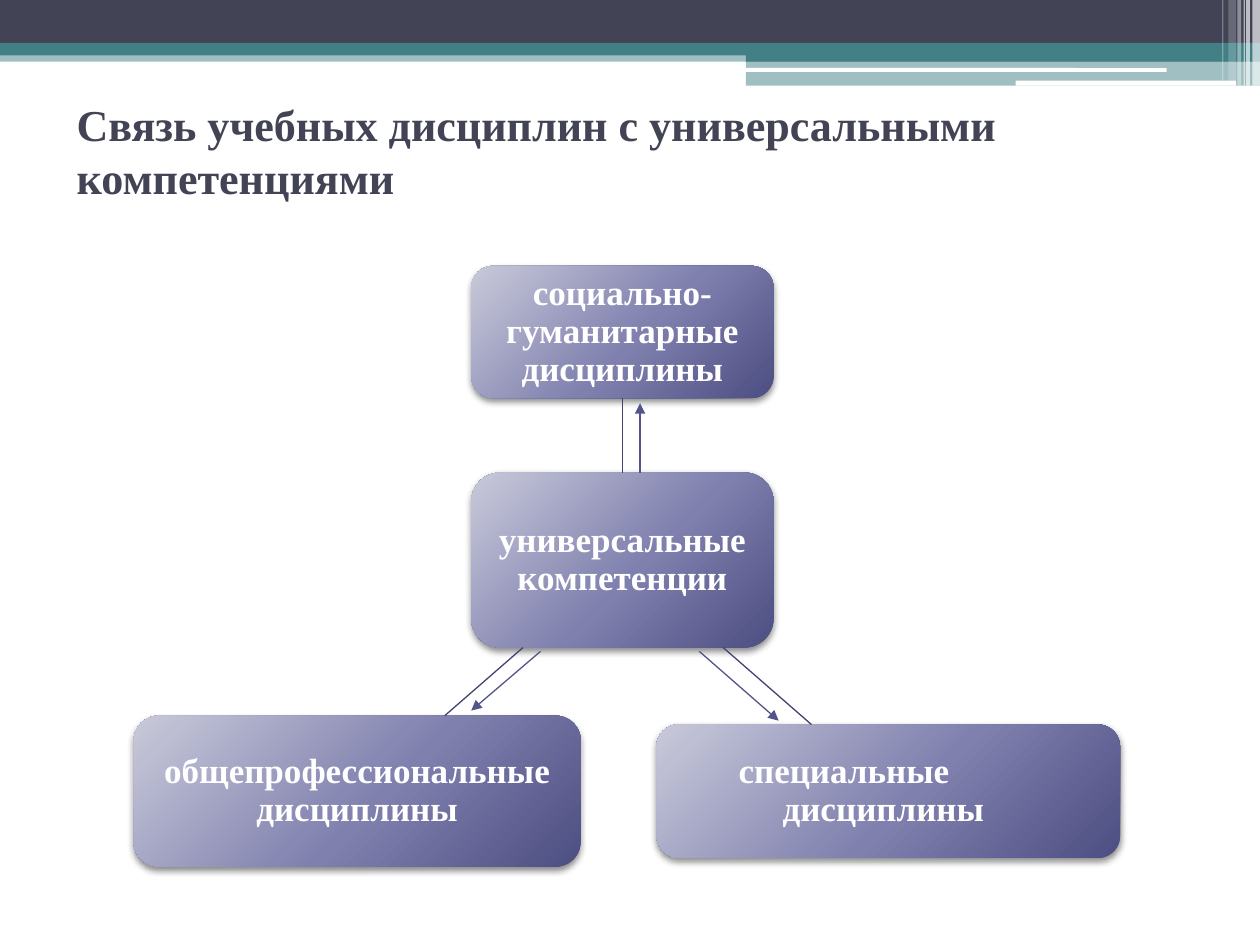
from typing import NamedTuple

from lxml import etree
from pptx import Presentation, util as u
from pptx.dml.color import RGBColor
from pptx.enum import shapes as sh, text as tx
from pptx.oxml import ns

# Grid: 100 columns by 75 rows of square cells
COLS, ROWS, CELL = 100, 75, u.Inches(0.1)
FONT = "Times New Roman"
DARK, TEAL, WHITE = "424456", "438086", "FFFFFF"
RECT = sh.MSO_SHAPE.RECTANGLE
ROUND = sh.MSO_SHAPE.ROUNDED_RECTANGLE
STOPS = ((0, "C9C9DA"), (55, "7F80AE"), (100, "4D4E81"))


class Band(NamedTuple):
    x: float
    y: float
    w: float
    h: float
    color: str
    alpha: int = 100
    form: int = RECT


class Node(NamedTuple):
    label: str
    x: float
    y: float
    w: float
    h: float
    left: float = 0  # text indent of wrapped lines, in cells
    first: float = 0  # offset of the first line, in cells


class Link(NamedTuple):
    x1: float
    y1: float
    x2: float
    y2: float
    color: str
    arrow: bool


def cells(*vals: float) -> list:
    return [u.Emu(round(v * CELL)) for v in vals]


def rgb(code: str) -> RGBColor:
    return RGBColor.from_string(code)


def sub(node, tag: str, **attrs):
    return etree.SubElement(node, ns.qn(tag), {k: str(v) for k, v in attrs.items()})


def write(shape, words: str, *, size: float, color: str, align, inset=None,
          line=1.0, left=0.0, first=0.0) -> None:
    frame = shape.text_frame
    frame.word_wrap = True
    frame.vertical_anchor = tx.MSO_ANCHOR.MIDDLE
    if inset is not None:
        for side in ("left", "right", "top", "bottom"):
            setattr(frame, f"margin_{side}", u.Inches(inset))
    para = frame.paragraphs[0]
    para.alignment, para.line_spacing = align, line
    if left:
        props = para._p.get_or_add_pPr()
        props.set("marL", str(cells(left)[0]))
        props.set("indent", str(cells(first)[0]))
    run = para.add_run()
    run.text = words
    run.font.name, run.font.size, run.font.bold = FONT, u.Pt(size), True
    run.font.color.rgb = rgb(color)


def draw_band(slide, band: Band) -> None:
    shape = slide.shapes.add_shape(band.form, *cells(*band[:4]))
    shape.shadow.inherit = False
    shape.line.fill.background()
    shape.fill.solid()
    shape.fill.fore_color.rgb = rgb(band.color)
    if band.alpha < 100:
        tone = shape._element.spPr.find(".//" + ns.qn("a:srgbClr"))
        sub(tone, "a:alpha", val=band.alpha * 1000)


def draw_node(slide, node: Node):
    shape = slide.shapes.add_shape(ROUND, *cells(node.x, node.y, node.w, node.h))
    shape.line.fill.background()
    shape.shadow.inherit = False
    props = shape._element.spPr
    # Radial gradient centred beyond the upper left corner
    grad = etree.Element(ns.qn("a:gradFill"), rotWithShape="1")
    stops = sub(grad, "a:gsLst")
    for pos, code in STOPS:
        sub(sub(stops, "a:gs", pos=pos * 1000), "a:srgbClr", val=code)
    way = sub(grad, "a:path", path="circle")
    sub(way, "a:fillToRect", l=-40000, t=-90000, r=140000, b=190000)
    props.find(ns.qn("a:prstGeom")).addnext(grad)
    # Soft shadow below
    glow = sub(props.find(ns.qn("a:effectLst")), "a:outerShdw", blurRad=u.Pt(4),
               dist=u.Pt(2), dir=5400000, rotWithShape=0)
    sub(sub(glow, "a:srgbClr", val="000000"), "a:alpha", val=45000)
    align = tx.PP_ALIGN.LEFT if node.left else tx.PP_ALIGN.CENTER
    write(shape, node.label, size=20, color=WHITE, align=align, inset=0.06,
          line=0.9, left=node.left, first=node.first)
    return shape


def draw_link(slide, link: Link):
    line = slide.shapes.add_connector(sh.MSO_CONNECTOR.STRAIGHT, *cells(*link[:4]))
    line.line.width = u.Pt(0.75)
    line.line.color.rgb = rgb(link.color)
    if link.arrow:
        sub(line.line._get_or_add_ln(), "a:tailEnd", type="triangle")
    sub(line._element.spPr, "a:effectLst")
    return line


BANDS = [
    Band(0, 4, COLS, 0.9, TEAL, 50),
    Band(0, 0, COLS, 3.4, DARK),
    Band(0, 3.4, COLS, 1, TEAL),
    Band(59.2, 3.9, 40.8, 1, TEAL),
    Band(59.2, 4.8, 40.8, 2, TEAL, 50),
    Band(59.1, 5.4, 33.5, 0.3, WHITE, form=ROUND),
    Band(80.6, 6.4, 17.5, 0.4, WHITE, form=ROUND),
] + [
    # Pale stripes at the right edge
    Band(x, 0, w, h, WHITE, alpha) for x, w, h, alpha in (
        (99.4, 0.6, 6.8, 65), (98.9, 0.3, 6.8, 65), (98.7, 0.1, 6.8, 60),
        (98.2, 0.3, 6.8, 40), (97.5, 0.6, 6.4, 20), (97, 0.1, 6.4, 30))
]
CORE = Node("универсальные компетенции", 37.4, 37.5, 24, 13.9)
SOCIAL = Node("социально-гуманитарные дисциплины", 37.4, 21.1, 24, 10.5)
OTHERS = [
    Node("специальные дисциплины", 52.1, 57.5, 36.8, 10.6, 8.9, -3.5),
    Node("общепрофессиональные дисциплины", 10.6, 56.8, 35.5, 12),
]
EDGE, ARROW = "42436F", "53548A"
LINKS = [
    Link(57.4, 51.4, 64.4, 57.5, EDGE, False),
    Link(41.5, 51.4, 35.3, 56.8, EDGE, False),
    Link(42.9, 51.7, 37.4, 56.4, ARROW, True),
    Link(55.5, 51.7, 61.8, 57.2, ARROW, True),
    Link(50.8, 37.5, 50.8, 32, ARROW, True),
]


def main() -> None:
    deck = Presentation()
    deck.slide_width, deck.slide_height = cells(COLS, ROWS)
    slide = deck.slides.add_slide(deck.slide_layouts[6])

    # Header bands and title
    for band in BANDS:
        draw_band(slide, band)
    title = slide.shapes.add_textbox(*cells(5.1, 7.6, 92.4, 8.7))
    write(title, "Связь учебных дисциплин с универсальными компетенциями",
          size=25.2, color=DARK, align=tx.PP_ALIGN.LEFT)

    # Boxes, then the lines between them
    core, social = draw_node(slide, CORE), draw_node(slide, SOCIAL)
    for node in OTHERS:
        draw_node(slide, node)
    mid = CORE.x + CORE.w / 2
    stem = draw_link(slide, Link(mid, CORE.y, mid, SOCIAL.y + SOCIAL.h, EDGE, False))
    stem.begin_connect(core, 0)
    stem.end_connect(social, 2)
    for link in LINKS:
        draw_link(slide, link)

    deck.save("out.pptx")


if __name__ == "__main__":
    main()
